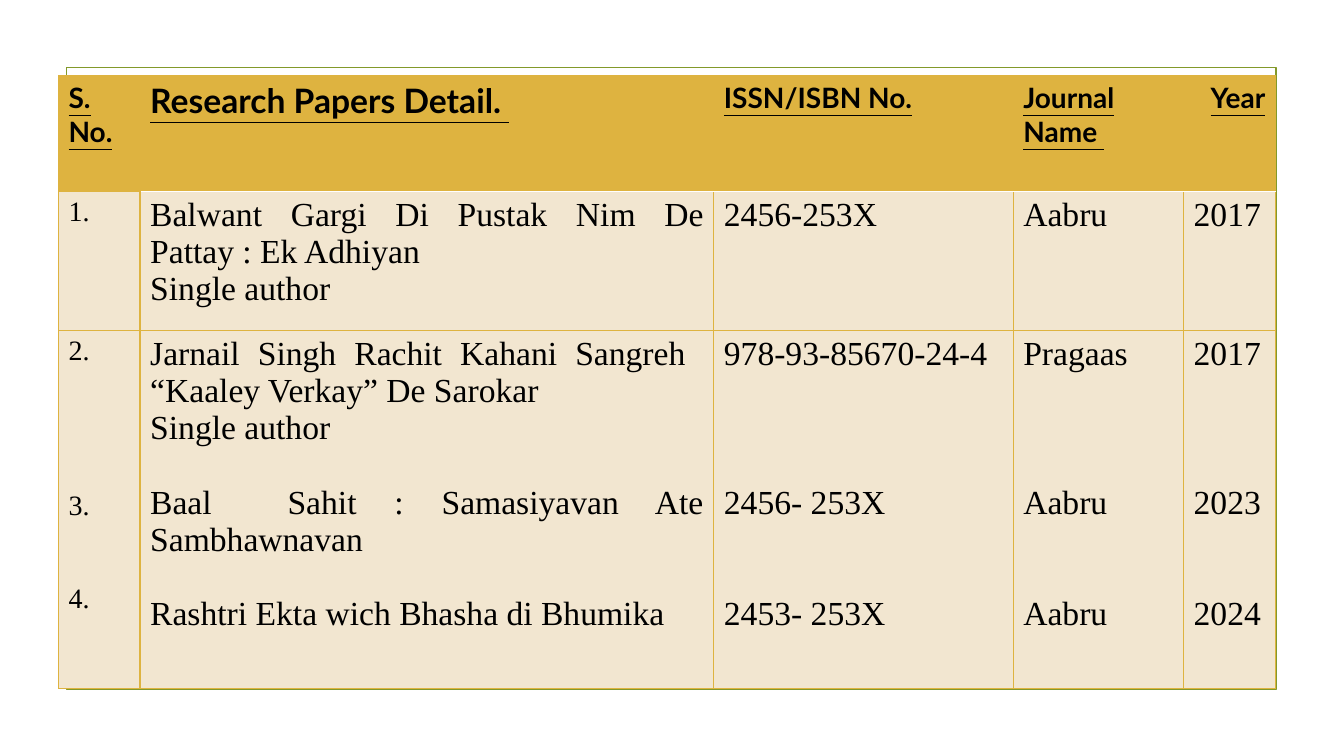
from lxml import etree
from pptx import Presentation
from pptx.dml.color import RGBColor
from pptx.enum import shapes, text
from pptx.oxml import ns
from pptx.util import Inches, Pt

# Content: each body cell lists (text, blank lines left above it)
HEADERS = ["S. No.", "Research Papers Detail. ", "ISSN/ISBN No.", "Journal Name ", "Year"]
PAPERS = [
    [
        [("1.", 0)],
        [("Balwant Gargi Di Pustak Nim De Pattay : Ek Adhiyan", 0), ("Single author ", 0)],
        [("2456-253X", 0)],
        [("Aabru", 0)],
        [("2017", 0)],
    ],
    [
        [("2.", 0), ("3.", 4), ("4.", 2)],
        [
            ("Jarnail Singh Rachit Kahani Sangreh  “Kaaley Verkay” De Sarokar ", 0),
            ("Single author ", 0),
            ("Baal  Sahit : Samasiyavan Ate Sambhawnavan", 1),
            ("Rashtri Ekta wich Bhasha di Bhumika", 1),
        ],
        [("978-93-85670-24-4", 0), ("2456- 253X", 3), ("2453- 253X", 2)],
        [("Pragaas", 0), ("Aabru", 3), ("Aabru", 2)],
        [("2017", 0), ("2023", 3), ("2024", 2)],
    ],
]
COLUMN_WIDTHS = [0.81, 5.69, 2.97, 1.69, 0.91]
ROW_HEIGHTS = [1.15, 1.38, 3.55]
NUMBER_COLUMN, TITLE_COLUMN, YEAR_COLUMN = 0, 1, 4

THEME = {
    "gold": "DEB340", "cream": "F2E6D0", "white": "FFFFFF", "green": "83992A", "ink": "000000",
    "header_font": "Lato", "body_font": "Times New Roman",
    "small": 20, "large": 24, "line_height": 1.107,
    "thin": 0.75, "thick": 1.25,
}


def color(name):
    return RGBColor.from_string(THEME[name])


def set_borders(cell, borders):
    properties = cell._tc.get_or_add_tcPr()
    for index, side in enumerate("LRTB"):
        color_name, weight = borders[side]
        line = etree.Element(ns.qn(f"a:ln{side}"), w=str(Pt(THEME[weight])))
        fill = etree.SubElement(line, ns.qn("a:solidFill"))
        etree.SubElement(fill, ns.qn("a:srgbClr"), val=THEME[color_name])
        properties.insert(index, line)


def write_cell(cell, lines, size, header):
    frame = cell.text_frame
    for index, (words, gap) in enumerate(lines):
        paragraph = frame.paragraphs[0] if index == 0 else frame.add_paragraph()
        paragraph.alignment = text.PP_ALIGN.JUSTIFY
        if gap:
            paragraph.space_before = Pt(round(gap * size * THEME["line_height"], 1))
        run = paragraph.add_run()
        run.text = words
        font = run.font
        font.name = THEME["header_font" if header else "body_font"]
        font.size = Pt(size)
        font.bold = font.underline = header
        font.color.rgb = color("ink")


presentation = Presentation()
presentation.slide_width, presentation.slide_height = Inches(13.33), Inches(7.5)
slide = presentation.slides.add_slide(presentation.slide_layouts[6])

# Thin frame behind the table
frame_shape = slide.shapes.add_shape(
    shapes.MSO_SHAPE.RECTANGLE, Inches(0.66), Inches(0.67), Inches(12), Inches(6.17))
frame_shape.shadow.inherit = False
frame_shape.fill.background()
frame_shape.line.color.rgb = color("green")
frame_shape.line.width = Pt(THEME["thick"])

# Table of papers
rows = [[[(label, 0)] for label in HEADERS]] + PAPERS
table = slide.shapes.add_table(
    len(rows), len(HEADERS), Inches(0.58), Inches(0.75),
    Inches(sum(COLUMN_WIDTHS)), Inches(sum(ROW_HEIGHTS))).table
table.horz_banding = False
for column, width in zip(table.columns, COLUMN_WIDTHS):
    column.width = Inches(width)
for row, height in zip(table.rows, ROW_HEIGHTS):
    row.height = Inches(height)

for r, row_content in enumerate(rows):
    for c, lines in enumerate(row_content):
        cell, header = table.cell(r, c), r == 0
        cell.fill.solid()
        cell.fill.fore_color.rgb = color("gold" if header else "cream")

        # White rule under the header, heavier rule after the number column
        borders = dict.fromkeys("LRTB", ("gold", "thin"))
        if c != NUMBER_COLUMN and r < 2:
            borders["B" if header else "T"] = ("white", "thick")
        if not header and c <= TITLE_COLUMN:
            borders["R" if c == NUMBER_COLUMN else "L"] = ("gold", "thick")
        set_borders(cell, borders)

        large = c == TITLE_COLUMN or (not header and c != NUMBER_COLUMN)
        write_cell(cell, lines, THEME["large" if large else "small"], header)

# The year heading reads from the right edge
year_heading = table.cell(0, YEAR_COLUMN).text_frame.paragraphs[0]
year_heading._p.get_or_add_pPr().set("rtl", "1")

presentation.save("out.pptx")
